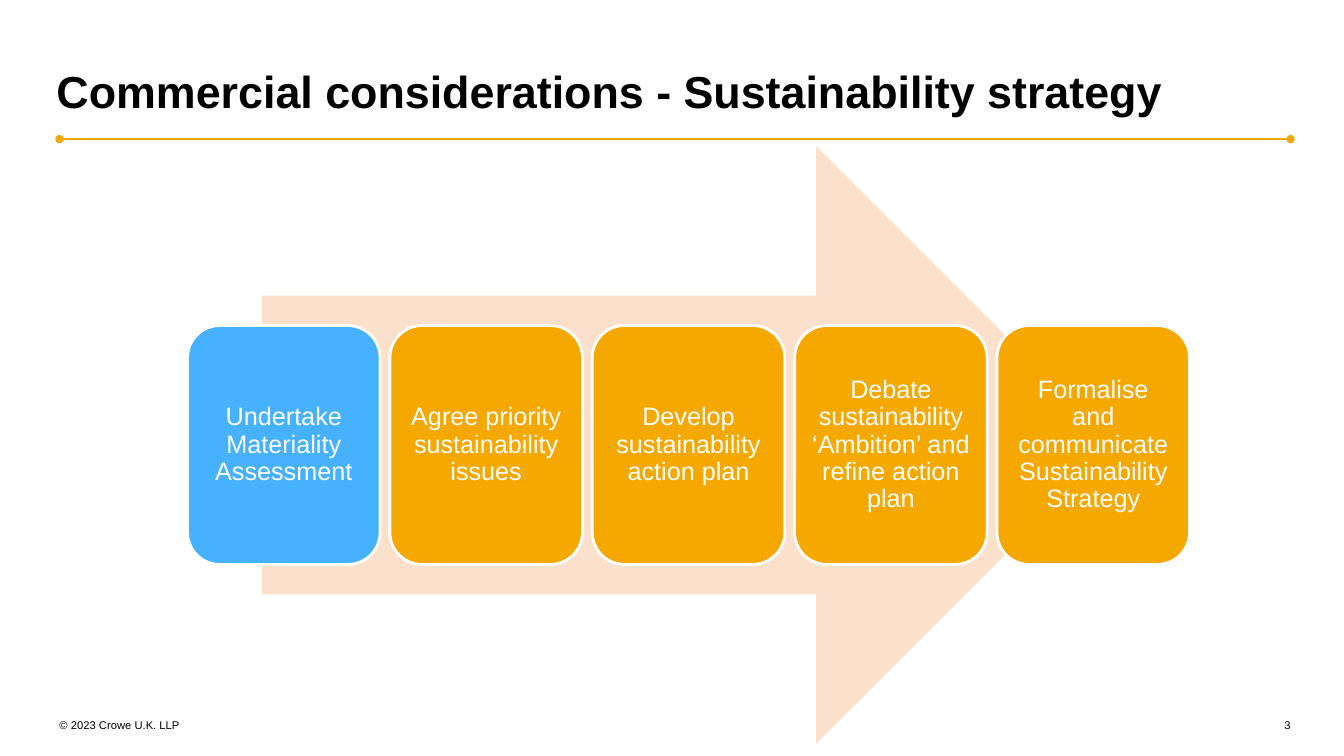
from lxml import etree
from pptx import Presentation
from pptx.dml.color import RGBColor
from pptx.enum import shapes, text
from pptx.oxml.ns import qn
from pptx.util import Inches, Pt

AMBER = RGBColor(0xF5, 0xA8, 0x00)
BLUE = RGBColor(0x46, 0xB2, 0xFF)
PEACH = RGBColor(0xFB, 0xE1, 0xCC)
WHITE = RGBColor(0xFF, 0xFF, 0xFF)
BLACK = RGBColor(0x00, 0x00, 0x00)

STEPS = [
    "Undertake Materiality Assessment",
    "Agree priority sustainability issues",
    "Develop sustainability action plan",
    "Debate sustainability ‘Ambition’ and refine action plan",
    "Formalise and communicate Sustainability Strategy",
]


def write(sp, content, size, color, align, spacing=1.0, inset=0, bold=False):
    """Fill a shape with one formatted paragraph and equal insets."""
    tf = sp.text_frame
    tf.text = content
    tf.margin_left = tf.margin_right = Inches(inset)
    tf.margin_top = tf.margin_bottom = Inches(inset)
    tf.word_wrap = True
    p = tf.paragraphs[0]
    p.alignment = align
    p.line_spacing = spacing
    font = p.runs[0].font
    font.name = "Arial"
    font.size = Pt(size)
    font.bold = bold
    font.color.rgb = color
    return tf


prs = Presentation()
prs.slide_width, prs.slide_height = Inches(13.33), Inches(7.5)
s = prs.slides.add_slide(prs.slide_layouts[5])

# Title and rule
title = s.shapes.title
title.left, title.top = Inches(0.56), Inches(0.71)
title.width, title.height = Inches(12.2), Inches(0.46)
tf = write(title, "Commercial considerations - Sustainability strategy", 32, BLACK,
           text.PP_ALIGN.LEFT, spacing=0.85, bold=True)
tf.vertical_anchor = text.MSO_ANCHOR.TOP
tf.auto_size = text.MSO_AUTO_SIZE.NONE

rule = s.shapes.add_connector(shapes.MSO_CONNECTOR.STRAIGHT, Inches(0.59), Inches(1.38),
                              Inches(12.8), Inches(1.38))
rule.line.color.rgb = AMBER
rule.line.width = Pt(1)
sp_pr = rule.line._get_or_add_ln().getparent()
for end in ("a:headEnd", "a:tailEnd"):
    etree.SubElement(sp_pr.find(qn("a:ln")), qn(end), type="oval")
etree.SubElement(sp_pr, qn("a:effectLst"))

# Process arrow with its steps
arrow = s.shapes.add_shape(shapes.MSO_SHAPE.RIGHT_ARROW, Inches(2.6), Inches(1.45),
                           Inches(8.46), Inches(5.93))
arrow.shadow.inherit = False
arrow.fill.solid()
arrow.fill.fore_color.rgb = PEACH
arrow.line.fill.background()

for i, step in enumerate(STEPS):
    box = s.shapes.add_shape(shapes.MSO_SHAPE.ROUNDED_RECTANGLE, Inches(1.86 + 2.007 * i),
                             Inches(3.23), Inches(1.91), Inches(2.37))
    box.shadow.inherit = False
    box.fill.solid()
    box.fill.fore_color.rgb = BLUE if i == 0 else AMBER
    box.line.color.rgb = WHITE
    box.line.width = Pt(2)
    tf = write(box, step, 18, WHITE, text.PP_ALIGN.CENTER, spacing=0.9, inset=0.07)
    tf.vertical_anchor = text.MSO_ANCHOR.MIDDLE

# Footer
for left, width, content, align in (
    (0.59, 1.24, "© 2023 Crowe U.K. LLP", text.PP_ALIGN.LEFT),
    (12.18, 0.62, "3", text.PP_ALIGN.RIGHT),
):
    footer = s.shapes.add_textbox(Inches(left), Inches(7.13), Inches(width), Inches(0.13))
    write(footer, content, 8, BLACK, align)

prs.save("out.pptx")
